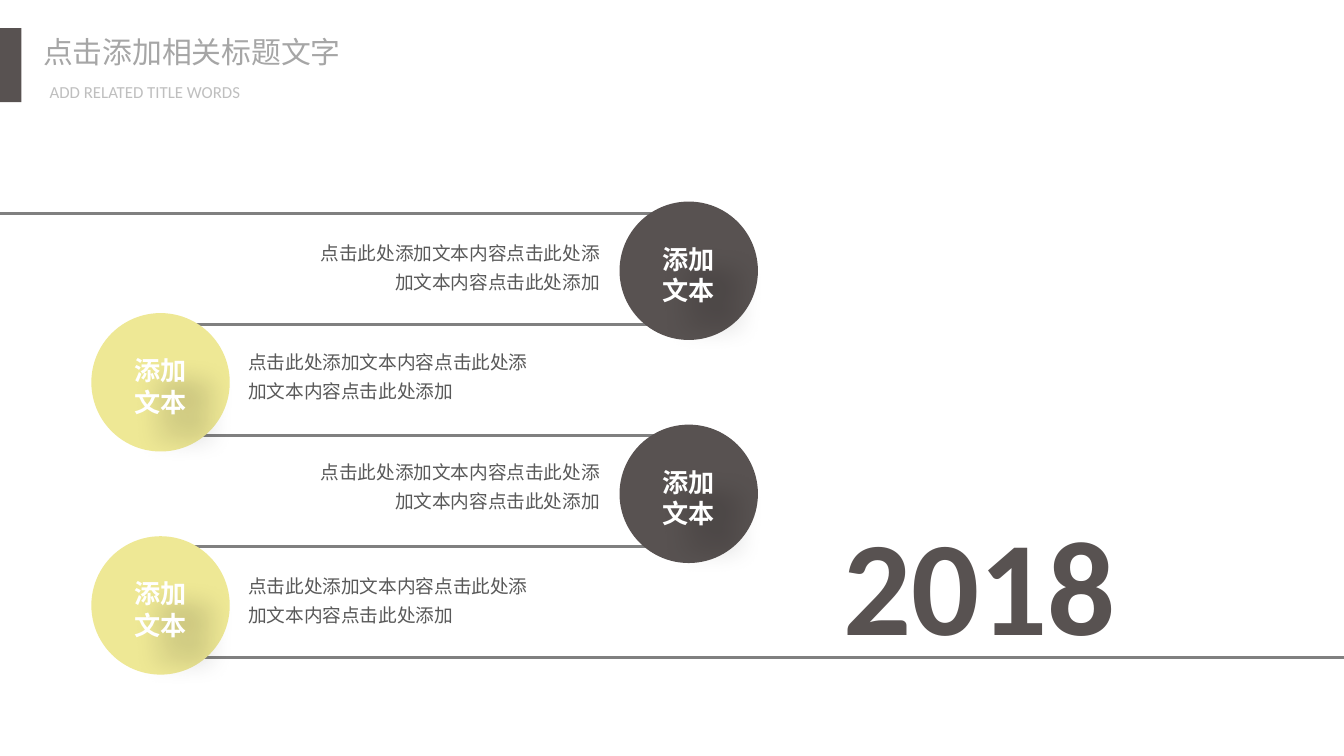
from lxml import etree
from pptx import Presentation
from pptx import util as u
from pptx.dml.color import RGBColor
from pptx.enum import shapes, text
from pptx.oxml.ns import qn

DARK = RGBColor(0x58, 0x52, 0x51)
YELLOW = RGBColor(0xEE, 0xE8, 0x95)
LINE = RGBColor(0x80, 0x80, 0x80)
TITLE = RGBColor(0xA6, 0xA6, 0xA6)
SUBTITLE = RGBColor(0xBF, 0xBF, 0xBF)
BODY = RGBColor(0x59, 0x59, 0x59)
WHITE = RGBColor(0xFF, 0xFF, 0xFF)
CJK, LATIN = "Noto Sans CJK SC", "Calibri"
LEFT, RIGHT = text.PP_ALIGN.LEFT, text.PP_ALIGN.RIGHT
CENTER, JUSTIFY = text.PP_ALIGN.CENTER, text.PP_ALIGN.JUSTIFY


def set_all(target, values):
    for name, value in values.items():
        setattr(target, name, value)


def write(sp, lines, size, font, color, bold=False, wrap=True,
          inset=(0.1, 0.05), **para):
    tf = sp.text_frame
    dx, dy = map(u.Inches, inset)
    set_all(tf, dict(word_wrap=wrap, auto_size=text.MSO_AUTO_SIZE.NONE,
                     vertical_anchor=text.MSO_ANCHOR.TOP, margin_left=dx,
                     margin_right=dx, margin_top=dy, margin_bottom=dy))
    for i, line in enumerate(lines):
        p = tf.add_paragraph() if i else tf.paragraphs[0]
        set_all(p, para)
        r = p.add_run()
        r.text = line
        set_all(r.font, dict(size=u.Pt(size), bold=bold, name=font))
        r.font.color.rgb = color
        etree.SubElement(r.font._element, qn("a:ea"), typeface=font)


def add_text(s, box, lines, *style, **options):
    sp = s.shapes.add_textbox(*map(u.Inches, box))
    write(sp, lines, *style, **options)
    return sp


def add_solid(s, kind, box, color):
    sp = s.shapes.add_shape(kind, *map(u.Inches, box))
    sp.shadow.inherit = False
    sp.fill.solid()
    sp.fill.fore_color.rgb = color
    sp.line.fill.background()


def add_rule(s, x1, x2, y):
    c = s.shapes.add_connector(shapes.MSO_CONNECTOR.STRAIGHT,
                               *map(u.Inches, (x1, y, x2, y)))
    c.line.color.rgb = LINE
    c.line.width = u.Pt(1.5)
    etree.SubElement(c._element.spPr, qn("a:effectLst"))


def add_soft_shadow(sp):
    effects = etree.SubElement(sp._element.spPr, qn("a:effectLst"))
    shadow = etree.SubElement(effects, qn("a:outerShdw"), dir="2700000",
                              blurRad=str(u.Pt(15)), dist=str(u.Inches(0.25)))
    black = etree.SubElement(shadow, qn("a:srgbClr"), val="000000")
    etree.SubElement(black, qn("a:alpha"), val="35000")


def add_header(s, x, y, w, h):
    add_solid(s, shapes.MSO_SHAPE.RECTANGLE, (x, y, 0.16, h), DARK)
    title = s.shapes.title
    set_all(title, dict(left=u.Inches(x + 0.24), top=u.Inches(y),
                        width=u.Inches(w), height=u.Inches(0.35)))
    write(title, ["点击添加相关标题文字"], 16, CJK, TITLE, wrap=False,
          inset=(0.08, 0.04), alignment=LEFT)
    add_text(s, (x + 0.29, y + 0.36, 2.23, 0.23), ["ADD RELATED TITLE WORDS"],
             9, LATIN, SUBTITLE, inset=(0.08, 0.04), alignment=JUSTIFY)


def add_badge(s, x, y, size, color):
    add_solid(s, shapes.MSO_SHAPE.OVAL, (x, y, size, size), color)
    label = add_text(s, (x + (size - 0.59) / 2, y + 0.26, 0.59, 0.57),
                     ["添加", "文本"], 14, CJK, WHITE, bold=True, wrap=False,
                     alignment=CENTER)
    add_soft_shadow(label)


def add_timeline(s, x, y, w, h):
    ends = [(0, 5.1)] + [(1.2, 5.1)] * 3 + [(1.2, 10)]
    for i, (x1, x2) in enumerate(ends):
        add_rule(s, x1, x2, y + 0.09 + i * 0.825)

    size = 1.03
    pitch = (h - size) / 3
    for i, text_y in enumerate((1.7, 2.51, 3.33, 4.18)):
        on_left = i % 2
        add_badge(s, x if on_left else x + w - size, y + i * pitch, size,
                  YELLOW if on_left else DARK)
        add_text(s, (1.75 if on_left else 2.16, text_y, 2.4, 0.54),
                 ["点击此处添加文本内容点击此处添加文本内容点击此处添加"],
                 10, CJK, BODY, alignment=LEFT if on_left else RIGHT,
                 line_spacing=1.3, space_before=u.Pt(6))


def main():
    prs = Presentation()
    prs.slide_width = u.Inches(10)
    prs.slide_height = u.Inches(10 * 9 / 16)
    s = prs.slides.add_slide(prs.slide_layouts[5])
    add_header(s, 0, 0.21, 2.4, 0.55)
    add_timeline(s, 0.68, 1.5, 4.96, 3.52)
    add_text(s, (6.18, 3.68, 2.25, 1.31), ["2018"], 72, LATIN, DARK,
             bold=True, wrap=False)
    prs.save("out.pptx")


if __name__ == "__main__":
    main()
